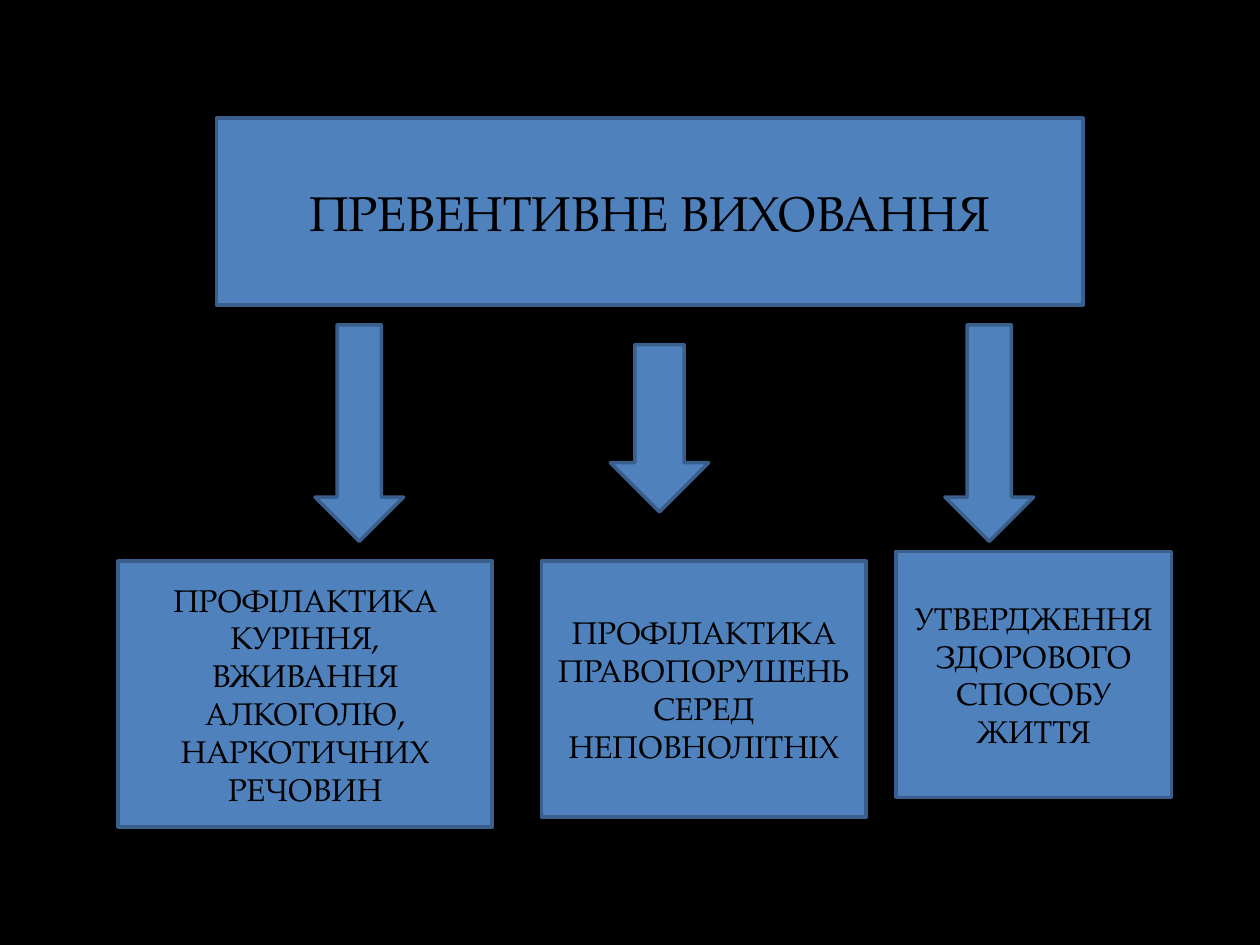
from pptx import Presentation
from pptx.dml.color import RGBColor
from pptx.enum.shapes import MSO_SHAPE as Shape
from pptx.enum.text import MSO_ANCHOR as Anchor, MSO_AUTO_SIZE as AutoSize, PP_ALIGN as Align
from pptx.util import Inches, Pt

WIDTH, HEIGHT = Inches(10), Inches(7.5)
COLUMNS, ROWS = 64, 48
FONT = "TeX Gyre Pagella"
BLACK, BLUE, EDGE = "000000", "4F81BD", "3A5F8C"

TITLE = "ПРЕВЕНТИВНЕ ВИХОВАННЯ"
TITLE_AREA = (11, 6, 44, 9.5)
ARROW_AREAS = [(16, 16.5, 4.5, 11), (31, 17.5, 5, 8.5), (48, 16.5, 4.5, 11)]
DIRECTIONS = [
    ((6, 28.5, 19, 13.5),
     ["ПРОФІЛАКТИКА КУРІННЯ,", "ВЖИВАННЯ АЛКОГОЛЮ, НАРКОТИЧНИХ РЕЧОВИН"]),
    ((27.5, 28.5, 16.5, 13),
     ["ПРОФІЛАКТИКА", "ПРАВОПОРУШЕНЬ СЕРЕД НЕПОВНОЛІТНІХ"]),
    ((45.5, 28, 14, 12.5), ["УТВЕРДЖЕННЯ ЗДОРОВОГО СПОСОБУ ЖИТТЯ"]),
]


def paint(fill, color):
    fill.solid()
    fill.fore_color.rgb = RGBColor.from_string(color)


def grid(area):
    left, top, width, height = area
    return (round(WIDTH * left / COLUMNS), round(HEIGHT * top / ROWS),
            round(WIDTH * width / COLUMNS), round(HEIGHT * height / ROWS))


def style(shape):
    paint(shape.fill, BLUE)
    paint(shape.line.fill, EDGE)
    shape.line.width = Pt(2)


def write(shape, lines, size):
    frame = shape.text_frame
    frame.word_wrap = True
    frame.auto_size = AutoSize.NONE
    frame.vertical_anchor = Anchor.MIDDLE
    for index, line in enumerate(lines):
        para = frame.add_paragraph() if index else frame.paragraphs[0]
        para.alignment = Align.CENTER
        span = para.add_run()
        span.text = line
        span.font.name = FONT
        span.font.size = Pt(size)
        paint(span.font.fill, BLACK)


def add_title(page):
    title = page.shapes.title
    title.left, title.top, title.width, title.height = grid(TITLE_AREA)
    style(title)
    write(title, [TITLE], 28)


def add_block(page, kind, area):
    block = page.shapes.add_shape(kind, *grid(area))
    block.shadow.inherit = False
    style(block)
    return block


def main():
    deck = Presentation()
    deck.slide_width, deck.slide_height = WIDTH, HEIGHT
    page = deck.slides.add_slide(deck.slide_layouts[5])
    paint(page.background.fill, BLACK)
    add_title(page)
    for area in ARROW_AREAS:
        add_block(page, Shape.DOWN_ARROW, area)
    for area, lines in DIRECTIONS:
        write(add_block(page, Shape.RECTANGLE, area), lines, 18)
    deck.save("out.pptx")


if __name__ == "__main__":
    main()
